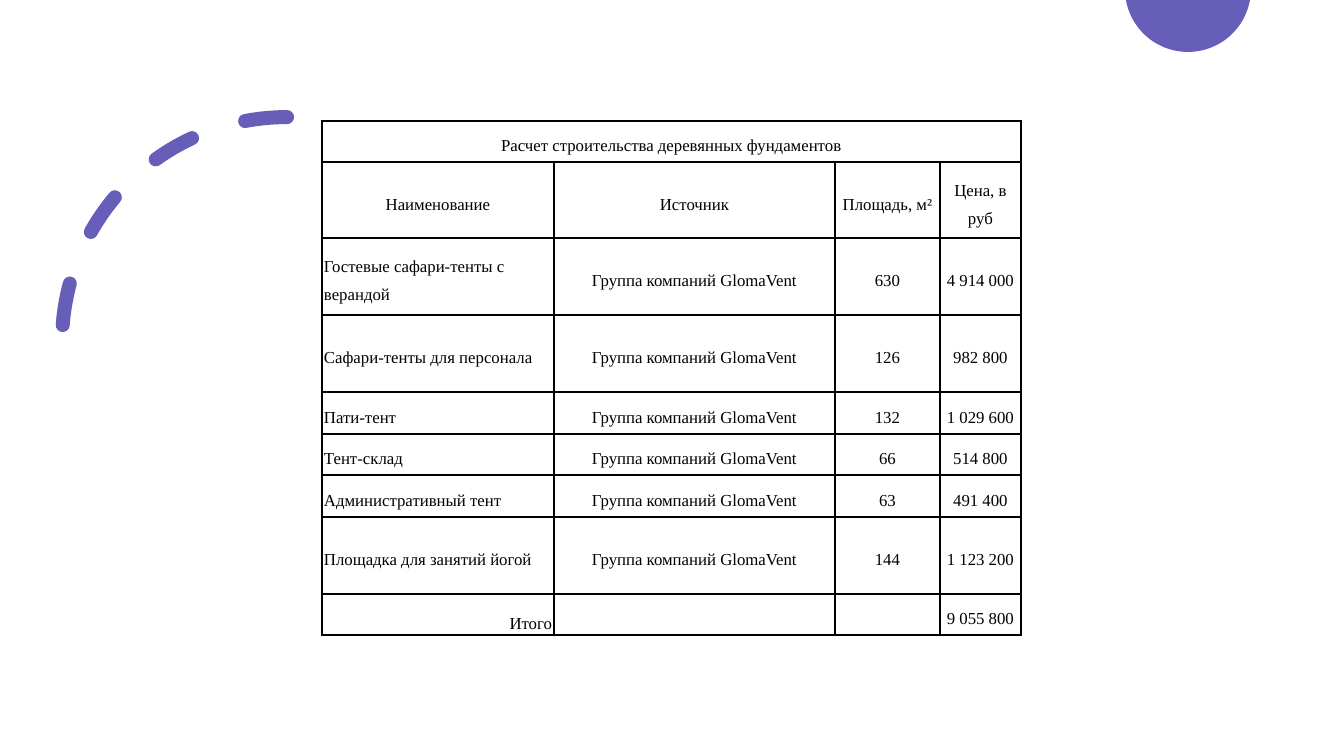
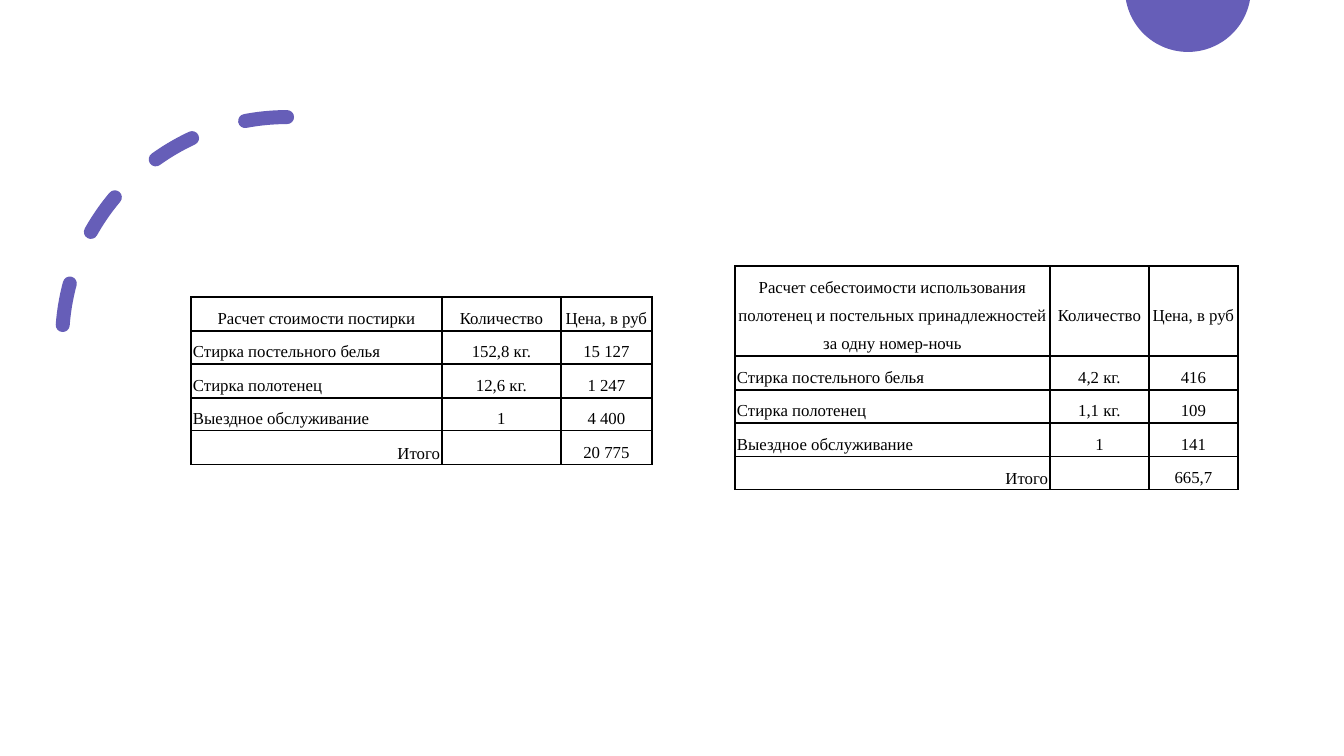
"""Build two slides of cost tables for a tent camp."""
import math

import lxml.etree
import pptx
import pptx.dml.color
import pptx.enum.dml
import pptx.enum.shapes
import pptx.enum.text
import pptx.oxml.ns
import pptx.util

SCALE = 914400 / 100.8
VIOLET = "665EB8"
BLACK = "000000"
FONT = "Times New Roman"
TOTAL = "Итого"
FIRM = "Группа компаний GlomaVent"
HEADS = ["Количество", "Цена, в руб"]
ALIGN = pptx.enum.text.PP_ALIGN
ANCHOR = pptx.enum.text.MSO_ANCHOR
SHAPE = pptx.enum.shapes.MSO_SHAPE
qn = pptx.oxml.ns.qn


def px(num):
    return round(num * SCALE)


def color(code):
    return pptx.dml.color.RGBColor.from_string(code)


pages = [
    [
        (322, 121, [232, 281, 105, 81], [41, 76, 77, 77, 42, 41, 42, 77, 41], [
            ["Расчет строительства деревянных фундаментов", "", "", ""],
            ["Наименование", "Источник", "Площадь, м²", "Цена, в руб"],
            ["Гостевые сафари-тенты с верандой", FIRM, "630", "4 914 000"],
            ["Сафари-тенты для персонала", FIRM, "126", "982 800"],
            ["Пати-тент", FIRM, "132", "1 029 600"],
            ["Тент-склад", FIRM, "66", "514 800"],
            ["Административный тент", FIRM, "63", "491 400"],
            ["Площадка для занятий йогой", FIRM, "144", "1 123 200"],
            [TOTAL, "", "", "9 055 800"],
        ], 2),
    ],
    [
        (191, 297, [251, 119, 91], [34, 33, 34, 33, 34], [
            ["Расчет стоимости постирки"] + HEADS,
            ["Стирка постельного белья", "152,8 кг.", "15 127"],
            ["Стирка полотенец", "12,6 кг.", "1 247"],
            ["Выездное обслуживание", "1", "4 400"],
            [TOTAL, "", "20 775"],
        ], 1),
        (735, 266, [315, 99, 89], [90, 34, 33, 34, 33], [
            ["Расчет себестоимости использования полотенец и постельных "
             "принадлежностей за одну номер-ночь"] + HEADS,
            ["Стирка постельного белья", "4,2 кг.", "416"],
            ["Стирка полотенец", "1,1 кг.", "109"],
            ["Выездное обслуживание", "1", "141"],
            [TOTAL, "", "665,7"],
        ], 1),
    ],
]

deck = pptx.Presentation()
deck.slide_width = px(1344)
deck.slide_height = px(756)

MID, TOP, RAD = 1188, -11, 63
start = math.asin(-TOP / RAD)
turn = math.pi - 2 * start
rim = []
for step in range(61):
    angle = start + turn * step / 60
    rim.append((px(MID + RAD * math.cos(angle)), px(TOP + RAD * math.sin(angle))))

for tables in pages:
    slide = deck.slides.add_slide(deck.slide_layouts[6])

    outline = slide.shapes.build_freeform(*rim[0], scale=1.0)
    outline.add_line_segments(rim[1:], close=True)
    disc = outline.convert_to_shape()
    disc.shadow.inherit = False
    disc.fill.solid()
    disc.fill.fore_color.rgb = color(VIOLET)
    disc.line.fill.background()

    arc = slide.shapes.add_shape(SHAPE.ARC, px(62), px(117), px(450), px(450))
    arc.shadow.inherit = False
    arc.rotation = 180
    arc.element.spPr.find(qn("a:xfrm")).set("flipV", "1")
    arc.fill.background()
    arc.line.color.rgb = color(VIOLET)
    arc.line.width = pptx.util.Pt(10)
    arc.line.dash_style = pptx.enum.dml.MSO_LINE.DASH
    arc.element.spPr.find(qn("a:ln")).set("cap", "rnd")

    for left, top, cols, rows, texts, heads in tables:
        frame = slide.shapes.add_table(
            len(rows), len(cols), px(left), px(top), px(sum(cols)), px(sum(rows)))
        table = frame.table
        table.first_row = False
        table.horz_banding = False
        for col, width in zip(table.columns, cols):
            col.width = px(width)
        for row, height in zip(table.rows, rows):
            row.height = px(height)
        if heads == 2:
            table.cell(0, 0).merge(table.cell(0, len(cols) - 1))

        for r, line in enumerate(texts):
            for c, text in enumerate(line):
                cell = table.cell(r, c)
                cell.margin_left = cell.margin_right = px(2)
                cell.margin_top = cell.margin_bottom = px(2)
                cell.vertical_anchor = ANCHOR.BOTTOM if text == TOTAL else ANCHOR.MIDDLE
                cell.fill.background()
                props = cell._tc.get_or_add_tcPr()
                for i, side in enumerate(["lnL", "lnR", "lnT", "lnB"]):
                    edge = lxml.etree.Element(qn("a:" + side), w="12700")
                    fill = lxml.etree.SubElement(edge, qn("a:solidFill"))
                    lxml.etree.SubElement(fill, qn("a:srgbClr"), val=BLACK)
                    props.insert(i, edge)

                para = cell.text_frame.paragraphs[0]
                para.text = text
                para.line_spacing = 1.5
                if text == TOTAL:
                    para.alignment = ALIGN.RIGHT
                elif c == 0 and r >= heads:
                    para.alignment = ALIGN.LEFT
                else:
                    para.alignment = ALIGN.CENTER
                for run in para.runs:
                    run.font.name = FONT
                    run.font.size = pptx.util.Pt(12)
                    run.font.color.rgb = color(BLACK)
                if not text:
                    lxml.etree.SubElement(para._p, qn("a:endParaRPr"), sz="1200")

deck.save("out.pptx")
